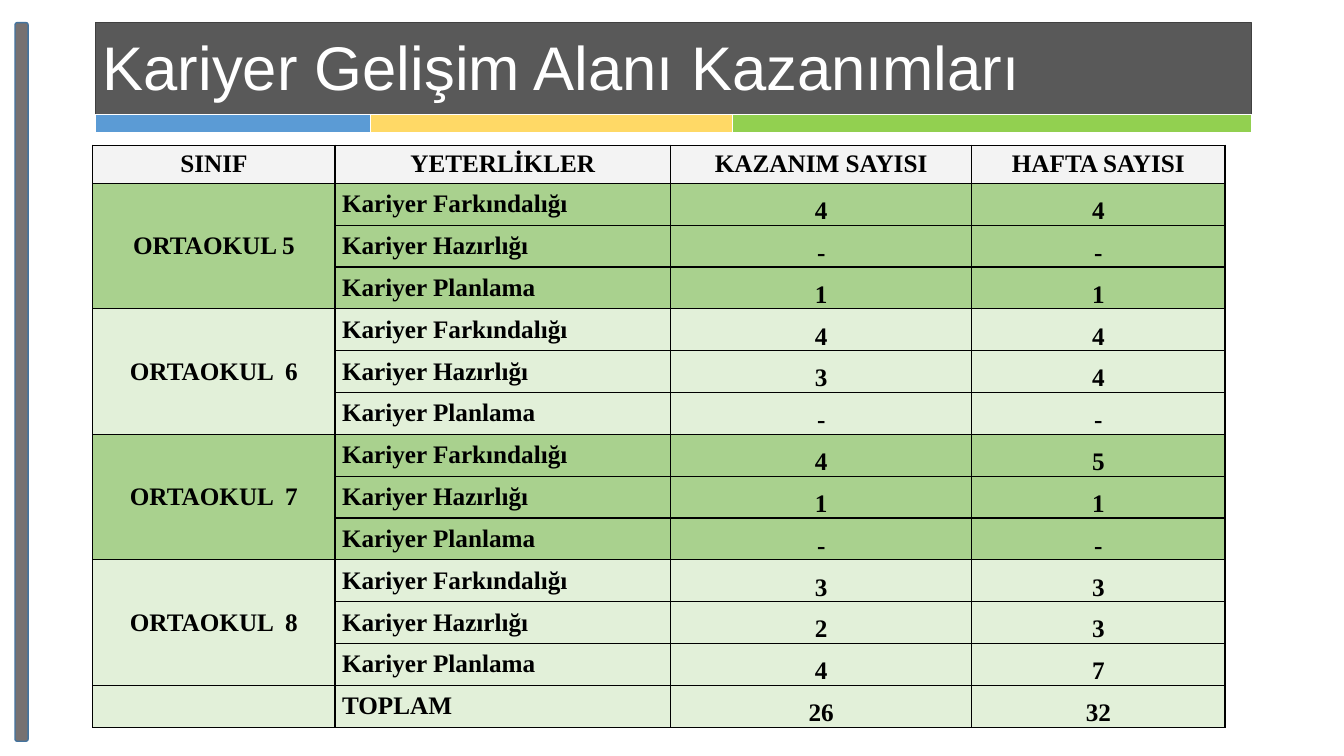
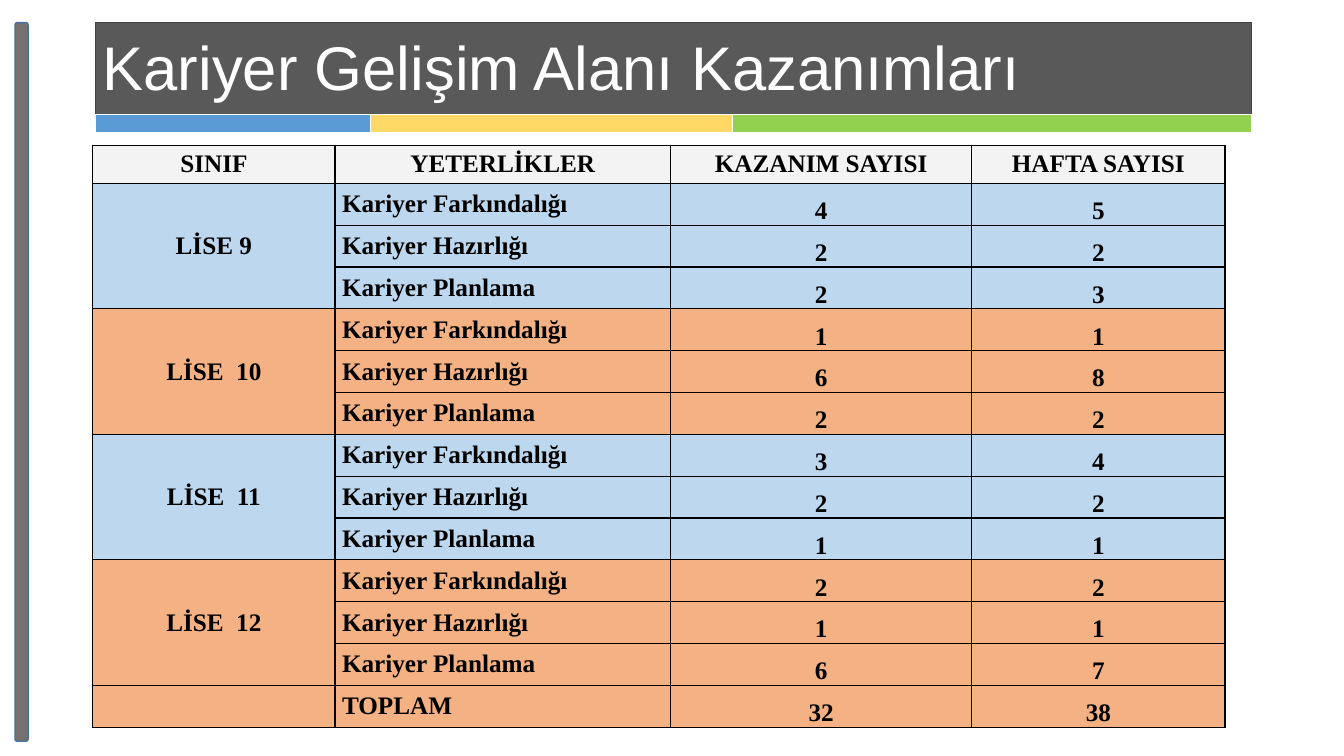
"""Builds two slides of career development outcome tables for middle and high school."""
from lxml.etree import SubElement
from pptx import Presentation
from pptx.dml.color import RGBColor
from pptx.enum.shapes import MSO_SHAPE as Shape
from pptx.enum.text import MSO_ANCHOR as Anchor, PP_ALIGN as Align
from pptx.oxml.ns import qn
from pptx.util import Cm, Pt

WHITE = RGBColor(0xFF, 0xFF, 0xFF)
BLACK = RGBColor(0x00, 0x00, 0x00)
TITLE_GREY = RGBColor(0x59, 0x59, 0x59)
TITLE_EDGE = RGBColor(0x40, 0x40, 0x40)
BAR_GREY = RGBColor(0x76, 0x71, 0x71)
BAR_EDGE = RGBColor(0x43, 0x73, 0x9E)
HEADER_GREY = RGBColor(0xF3, 0xF3, 0xF3)
GREEN = RGBColor(0xA9, 0xD1, 0x8E)
PALE_GREEN = RGBColor(0xE2, 0xF0, 0xD9)
PALE_BLUE = RGBColor(0xBD, 0xD7, 0xEE)
ORANGE = RGBColor(0xF4, 0xB1, 0x83)
STRIP_COLORS = [RGBColor(0x5B, 0x9B, 0xD5), RGBColor(0xFF, 0xD9, 0x66), RGBColor(0x92, 0xD0, 0x50)]

TITLE = "Kariyer Gelişim Alanı Kazanımları"
HEADERS = ["SINIF", "YETERLİKLER", "KAZANIM SAYISI", "HAFTA SAYISI"]
SKILLS = ["Kariyer Farkındalığı", "Kariyer Hazırlığı", "Kariyer Planlama"]
STRIP_WIDTHS = [6.93, 9.12, 13.08]
COLUMN_WIDTHS = [6.1, 8.46, 7.59, 6.38]
TABLE_HEIGHT, HEADER_HEIGHT = 14.67, 0.96

SCHOOLS = [
    (
        [GREEN, PALE_GREEN],
        [
            ("ORTAOKUL 5", [("4", "4"), ("-", "-"), ("1", "1")]),
            ("ORTAOKUL  6", [("4", "4"), ("3", "4"), ("-", "-")]),
            ("ORTAOKUL  7", [("4", "5"), ("1", "1"), ("-", "-")]),
            ("ORTAOKUL  8", [("3", "3"), ("2", "3"), ("4", "7")]),
        ],
        ("26", "32"),
    ),
    (
        [PALE_BLUE, ORANGE],
        [
            ("LİSE 9", [("4", "5"), ("2", "2"), ("2", "3")]),
            ("LİSE  10", [("1", "1"), ("6", "8"), ("2", "2")]),
            ("LİSE  11", [("3", "4"), ("2", "2"), ("1", "1")]),
            ("LİSE  12", [("2", "2"), ("1", "1"), ("6", "7")]),
        ],
        ("32", "38"),
    ),
]


def add_grid(slide, left, top, widths, heights):
    frame = slide.shapes.add_table(
        len(heights), len(widths), Cm(left), Cm(top), Cm(sum(widths)), Cm(sum(heights)))
    table = frame.table
    table.first_row = table.horz_banding = False
    for column, width in zip(table.columns, widths):
        column.width = Cm(width)
    for row, height in zip(table.rows, heights):
        row.height = Cm(height)
    return table


def style_cell(cell, fill, border, margin, bottom_width=1):
    properties = cell._tc.get_or_add_tcPr()
    for side, width in [("L", 1), ("R", 1), ("T", 1), ("B", bottom_width)]:
        line = SubElement(properties, qn(f"a:ln{side}"), w=str(Pt(width)))
        SubElement(SubElement(line, qn("a:solidFill")), qn("a:srgbClr"), val=str(border))
    cell.fill.solid()
    cell.fill.fore_color.rgb = fill
    cell.margin_left = cell.margin_right = Cm(margin)
    cell.margin_top = cell.margin_bottom = 0
    cell.vertical_anchor = Anchor.MIDDLE


presentation = Presentation()
presentation.slide_width = Cm(33.87)
presentation.slide_height = Cm(19.05)

for colors, grades, totals in SCHOOLS:
    slide = presentation.slides.add_slide(presentation.slide_layouts[6])

    for kind, left, width, height, fill, edge in [
        (Shape.RECTANGLE, 2.41, 29.13, 2.39, TITLE_GREY, TITLE_EDGE),
        (Shape.ROUNDED_RECTANGLE, 0.38, 0.33, 18.11, BAR_GREY, BAR_EDGE),
    ]:
        shape = slide.shapes.add_shape(kind, Cm(left), Cm(0.57), Cm(width), Cm(height))
        shape.shadow.inherit = False
        shape.fill.solid()
        shape.fill.fore_color.rgb = fill
        shape.line.color.rgb = edge
        shape.line.width = Pt(1)

    strip = add_grid(slide, 2.41, 2.89, STRIP_WIDTHS, [0.48])
    for cell, color in zip(strip.rows[0].cells, STRIP_COLORS):
        style_cell(cell, color, WHITE, 0, bottom_width=3)
        SubElement(cell.text_frame.paragraphs[0]._p, qn("a:endParaRPr"), sz="600")

    rows = [HEADERS]
    fills = [HEADER_GREY]
    for index, (grade, counts) in enumerate(grades):
        for skill, count in zip(SKILLS, counts):
            rows.append([grade if skill == SKILLS[0] else "", skill, *count])
            fills.append(colors[index % 2])
    rows.append(["", "TOPLAM", *totals])
    fills.append(colors[1])

    body_count = len(rows) - 1
    row_height = (TABLE_HEIGHT - HEADER_HEIGHT) / body_count
    table = add_grid(slide, 2.34, 3.66, COLUMN_WIDTHS, [HEADER_HEIGHT] + [row_height] * body_count)
    for row_index, (texts, fill) in enumerate(zip(rows, fills)):
        for column_index, text in enumerate(texts):
            cell = table.cell(row_index, column_index)
            style_cell(cell, fill, BLACK, 0.18)
            paragraph = cell.text_frame.paragraphs[0]
            if not text:
                SubElement(paragraph._p, qn("a:endParaRPr"), sz="600")
                continue
            is_skill = row_index > 0 and column_index == 1
            paragraph.alignment = Align.LEFT if is_skill else Align.CENTER
            if row_index > 0 and column_index > 1:
                paragraph.line_spacing = Pt(29.7)
            run = paragraph.add_run()
            run.text = text
            run.font.name = "Times New Roman"
            run.font.size = Pt(18)
            run.font.bold = True
            run.font.color.rgb = BLACK
    for first in range(1, body_count, len(SKILLS)):
        table.cell(first, 0).merge(table.cell(first + len(SKILLS) - 1, 0))

    title_box = slide.shapes.add_textbox(Cm(2.34), Cm(0.58), Cm(29.21), Cm(2.41))
    title_box.text_frame.word_wrap = True
    title_box.text_frame.vertical_anchor = Anchor.MIDDLE
    paragraph = title_box.text_frame.paragraphs[0]
    paragraph.line_spacing = 0.9
    run = paragraph.add_run()
    run.text = TITLE
    run.font.name = "Arial"
    run.font.size = Pt(44)
    run.font.color.rgb = WHITE

presentation.save("out.pptx")
